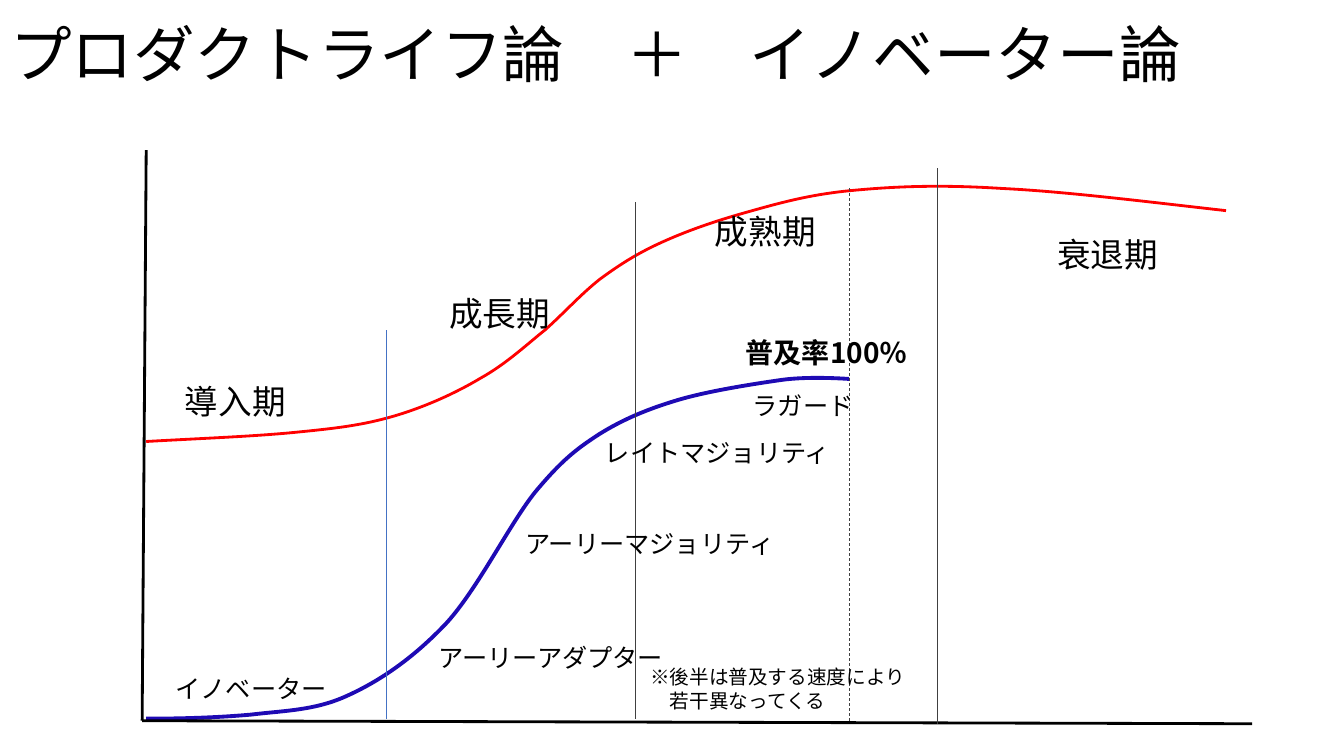
from lxml import etree
from pptx import Presentation
from pptx.dml.color import RGBColor
from pptx.enum.dml import MSO_LINE
from pptx.enum.shapes import MSO_CONNECTOR
from pptx.enum.text import MSO_ANCHOR, MSO_AUTO_SIZE, PP_ALIGN
from pptx.oxml.ns import qn
from pptx.util import Inches, Pt

BLACK = RGBColor(0x00, 0x00, 0x00)
GREY = RGBColor(0x40, 0x40, 0x40)
BLUE = RGBColor(0x44, 0x72, 0xC4)
RED = RGBColor(0xFF, 0x00, 0x00)
INDIGO = RGBColor(0x1E, 0x0A, 0xB4)
LEFT, CENTER = PP_ALIGN.LEFT, PP_ALIGN.CENTER
MIDDLE = MSO_ANCHOR.MIDDLE
NO_AUTOFIT = MSO_AUTO_SIZE.NONE
STRAIGHT = MSO_CONNECTOR.STRAIGHT
DASH = MSO_LINE.DASH
GOTHIC, CALIBRI = "Noto Sans CJK JP", "Calibri"


def write_text(shape, text, size, font=GOTHIC, align=LEFT, bold=False):
    frame = shape.text_frame
    frame.word_wrap = True
    frame.auto_size = NO_AUTOFIT
    paragraph = frame.paragraphs[0]
    paragraph.text = text
    paragraph.alignment = align
    for run in paragraph.runs:
        run.font.name = font
        run.font.size = Pt(size)
        run.font.bold = bold
        run.font.color.rgb = BLACK
        east_asian = etree.Element(qn("a:ea"), typeface=GOTHIC)
        run.font._element.find(qn("a:latin")).addnext(east_asian)
    return paragraph


presentation = Presentation()
presentation.slide_width = Inches(13.33)
presentation.slide_height = Inches(7.5)
slide = presentation.slides.add_slide(presentation.slide_layouts[5])
shapes = slide.shapes

title = shapes.title
title.left, title.top = 0, Inches(0.01)
title.width, title.height = presentation.slide_width, Inches(1.13)
title.text_frame.vertical_anchor = MIDDLE
write_text(title, "プロダクトライフ論　＋　イノベーター論", 44).line_spacing = 0.9

life_cycle = [
    (145, 438), (198, 435), (251, 433), (292, 429), (333, 425), (359, 422), (390, 413),
    (421, 404), (452, 390), (477, 375), (502, 361), (521, 343), (541, 327),
    (560, 310), (576, 292), (595, 277), (614, 263), (631, 252), (655, 241),
    (679, 230), (707, 220), (739, 211), (771, 202), (802, 193), (845, 189),
    (887, 185), (932, 183), (994, 187), (1056, 190), (1136, 200), (1216, 209),
]
adoption = [
    (145, 713), (180, 713), (215, 712), (249, 709), (282, 705), (313, 705), (345, 690),
    (378, 675), (411, 652), (443, 618), (474, 584), (506, 519), (531, 488),
    (557, 457), (571, 446), (594, 431), (618, 416), (642, 406), (672, 397),
    (702, 388), (747, 381), (775, 377), (803, 373), (842, 376), (842, 376),
]
for points, color, width in [(life_cycle, RED, 2), (adoption, INDIGO, 2.75)]:
    builder = shapes.build_freeform(*points[0], scale=Inches(0.01))
    builder.add_line_segments(points[1:], close=False)
    curve = builder.convert_to_shape()
    curve.shadow.inherit = False
    curve.fill.background()
    curve.line.color.rgb = color
    curve.line.width = Pt(width)
    outline = curve.element.find(".//" + qn("a:path"))
    segments = outline.findall(qn("a:lnTo"))
    for start in range(0, len(segments), 3):
        bezier = etree.SubElement(outline, qn("a:cubicBezTo"))
        for segment in segments[start:start + 3]:
            bezier.append(segment[0])
            outline.remove(segment)

for x1, y1, x2, y2, color, width, dash in [
    (1.41, 7.15, 12.42, 7.18, BLACK, 2, None),
    (1.41, 7.15, 1.45, 1.49, BLACK, 2, None),
    (8.42, 7.15, 8.42, 1.87, GREY, 0.5, DASH),
    (3.83, 7.13, 3.83, 3.27, BLUE, 0.5, None),
    (6.3, 7.13, 6.3, 2, GREY, 0.5, None),
    (9.3, 7.18, 9.3, 1.67, GREY, 0.5, None),
]:
    line = shapes.add_connector(STRAIGHT, Inches(x1), Inches(y1), Inches(x2), Inches(y2))
    line.line.color.rgb = color
    line.line.width = Pt(width)
    line.line.dash_style = dash
    etree.SubElement(line.element.spPr, qn("a:effectLst"))

phase = dict(size=24, font=CALIBRI, align=CENTER)
adopter = dict(size=18, align=CENTER)
for text, left, top, width, height, style in [
    ("普及率100％", 7.3, 3.28, 2, 0.44, dict(size=20, bold=True)),
    ("導入期", 1.67, 3.73, 1.33, 0.5, phase),
    ("成長期", 4.29, 2.86, 1.33, 0.5, phase),
    ("成熟期", 6.92, 2.04, 1.34, 0.5, phase),
    ("衰退期", 10.35, 2.27, 1.27, 0.5, phase),
    ("イノベーター", 1.63, 6.63, 1.72, 0.4, adopter),
    ("アーリーアダプター", 4.23, 6.32, 2.47, 0.4, adopter),
    ("アーリーマジョリティ", 5.08, 5.19, 2.73, 0.4, adopter),
    ("レイトマジョリティ", 5.9, 4.29, 2.69, 0.4, dict(size=18)),
    ("ラガード", 7.36, 3.82, 1.21, 0.4, adopter),
    ("※後半は普及する速度により\n　若干異なってくる", 6.35, 6.55, 3.45, 0.57, dict(size=14)),
]:
    label = shapes.add_textbox(Inches(left), Inches(top), Inches(width), Inches(height))
    write_text(label, text, **style)

presentation.save("out.pptx")
